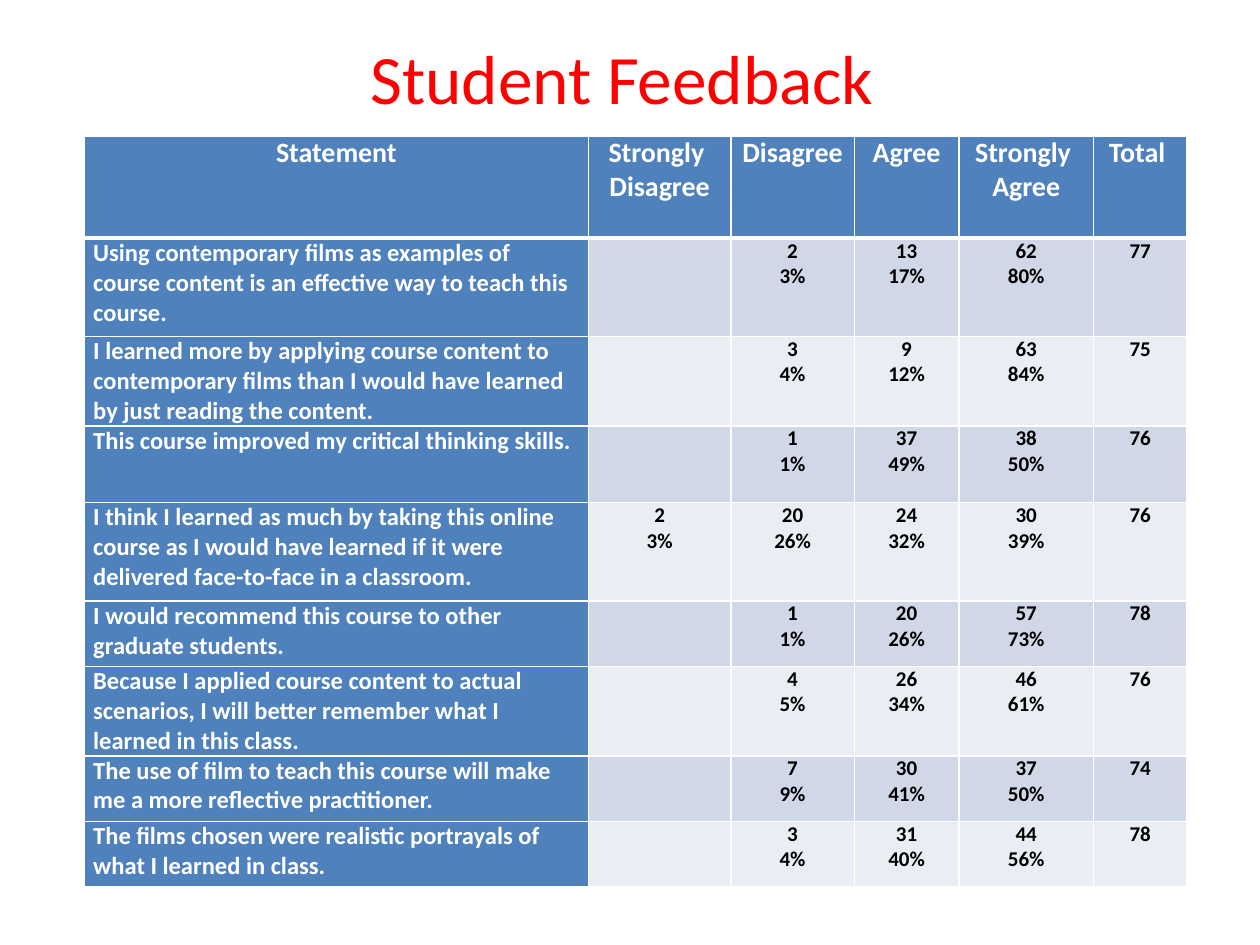
"""Build the student feedback slide: a title above a survey results table."""
import pptx
import pptx.dml.color
import pptx.enum.text
import pptx.oxml.ns
import pptx.util
from lxml import etree

Inches = pptx.util.Inches
Pt = pptx.util.Pt
Align = pptx.enum.text.PP_ALIGN
Anchor = pptx.enum.text.MSO_ANCHOR

COLORS = {
    "title": "FF0000",
    "label": "4F81BD",
    "odd": "D0D8E8",
    "even": "E9EDF4",
    "light": "FFFFFF",
    "dark": "000000",
}
FONT = "Calibri"
TITLE = "Student Feedback "
HEADERS = ["Statement", "Strongly \nDisagree", "Disagree", "Agree", "Strongly \nAgree", "Total "]
RESULTS = [
    ("Using contemporary films as examples of course content is an effective way to teach this course.",
     "", "2\n3%", "13\n17%", "62\n80%", "77"),
    ("I learned more by applying course content to contemporary films than I would have learned "
     "by just reading the content.",
     "", "3\n4%", "9\n12%", "63\n84%", "75"),
    ("This course improved my critical thinking skills.",
     "", "1\n1%", "37\n49%", "38\n50%", "76"),
    ("I think I learned as much by taking this online course as I would have learned if it were "
     "delivered face-to-face in a classroom.",
     "2\n3%", "20\n26%", "24\n32%", "30\n39%", "76"),
    ("I would recommend this course to other graduate students.",
     "", "1\n1%", "20\n26%", "57\n73%", "78"),
    ("Because I applied course content to actual scenarios, I will better remember what I "
     "learned in this class.",
     "", "4\n5%", "26\n34%", "46\n61%", "76"),
    ("The use of film to teach this course will make me a more reflective practitioner.",
     "", "7\n9%", "30\n41%", "37\n50%", "74"),
    ("The films chosen were realistic portrayals of what I learned in class.",
     "", "3\n4%", "31\n40%", "44\n56%", "78"),
]
COLUMN_WIDTHS = [4.0, 1.13, 0.98, 0.83, 1.07, 0.74]
ROW_HEIGHTS = [0.81, 0.78, 0.71, 0.61, 0.78, 0.52, 0.71, 0.52, 0.52]
TABLE_LEFT, TABLE_TOP = 0.67, 1.08


def rgb(name):
    return pptx.dml.color.RGBColor.from_string(COLORS[name])


def write(text_frame, text, size, color, alignment, bold):
    text_frame.text = text
    for paragraph in text_frame.paragraphs:
        paragraph.alignment = alignment
        for run in paragraph.runs:
            run.font.name = FONT
            run.font.size = Pt(size)
            run.font.bold = bold
            run.font.color.rgb = rgb(color)


def set_borders(cell, widths):
    qn = pptx.oxml.ns.qn
    properties = cell._tc.get_or_add_tcPr()
    for side, width in widths.items():
        line = etree.SubElement(properties, qn(f"a:ln{side}"), w=str(Pt(width)))
        fill = etree.SubElement(line, qn("a:solidFill"))
        etree.SubElement(fill, qn("a:srgbClr"), val=COLORS["light"])


def add_title(slide):
    box = slide.shapes.add_textbox(Inches(0.5), Inches(0.3), Inches(9), Inches(0.62))
    box.text_frame.word_wrap = True
    box.text_frame.vertical_anchor = Anchor.MIDDLE
    write(box.text_frame, TITLE, 39.6, "title", Align.CENTER, False)


def style_cell(cell, text, row, column):
    is_header, is_statement = row == 0, column == 0
    is_label = is_header or is_statement
    cell.margin_left = cell.margin_right = Inches(0.07)
    cell.margin_top = cell.margin_bottom = 0
    cell.vertical_anchor = Anchor.TOP
    set_borders(cell, {"L": 1, "R": 1, "T": 3 if row == 1 else 1, "B": 3 if is_header else 1})
    cell.fill.solid()
    cell.fill.fore_color.rgb = rgb("label" if is_label else "odd" if row % 2 else "even")
    size = 16 if is_header else 14 if is_statement else 12
    alignment = Align.LEFT if is_statement and not is_header else Align.CENTER
    write(cell.text_frame, text, size, "light" if is_label else "dark", alignment, True)


def add_results(slide):
    rows = [HEADERS, *RESULTS]
    table = slide.shapes.add_table(
        len(rows), len(HEADERS), Inches(TABLE_LEFT), Inches(TABLE_TOP),
        Inches(sum(COLUMN_WIDTHS)), Inches(sum(ROW_HEIGHTS))).table
    for column, width in zip(table.columns, COLUMN_WIDTHS):
        column.width = Inches(width)
    for row, height in zip(table.rows, ROW_HEIGHTS):
        row.height = Inches(height)
    for row, texts in enumerate(rows):
        for column, text in enumerate(texts):
            style_cell(table.cell(row, column), text, row, column)


def main():
    presentation = pptx.Presentation()
    presentation.slide_width, presentation.slide_height = Inches(10), Inches(7.5)
    slide = presentation.slides.add_slide(presentation.slide_layouts[6])
    add_title(slide)
    add_results(slide)
    presentation.save("out.pptx")


if __name__ == "__main__":
    main()
